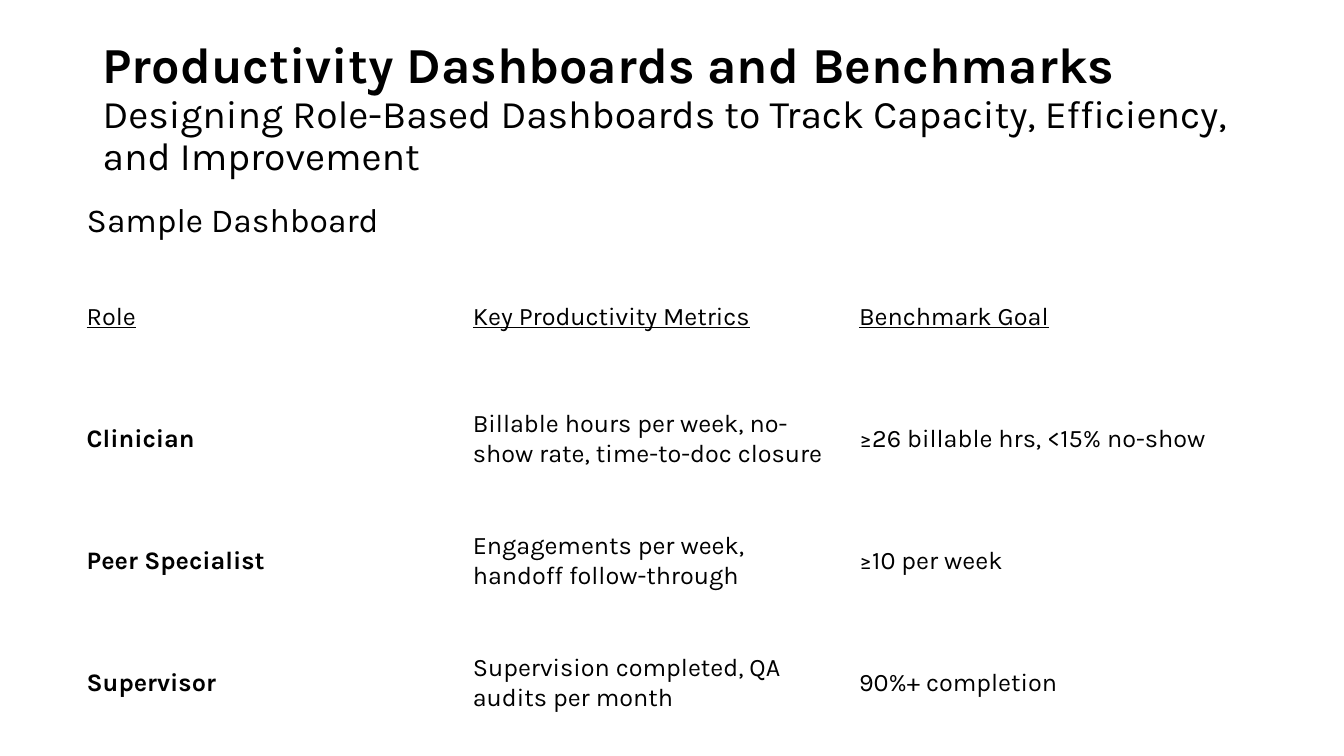
import pptx
import pptx.dml.color
import pptx.enum.text
import pptx.util

Inches = pptx.util.Inches
Pt = pptx.util.Pt

BLACK = pptx.dml.color.RGBColor(0x00, 0x00, 0x00)
FONT = "Karla"

HEADING = "Sample Dashboard"
COLUMNS = ("Role", "Key Productivity Metrics", "Benchmark Goal")
ROLES = (
    ("Clinician", "Billable hours per week, no-show rate, time-to-doc closure",
     "≥26 billable hrs, <15% no-show"),
    ("Peer Specialist", "Engagements per week, handoff follow-through",
     "≥10 per week"),
    ("Supervisor", "Supervision completed, QA audits per month",
     "90%+ completion"),
)


def write(para, text, size=18, bold=False, underline=False, spacing=None):
    if spacing:
        para.line_spacing = spacing
    span = para.add_run()
    span.text = text
    span.font.name = FONT
    span.font.size = Pt(size)
    span.font.bold = bold
    span.font.underline = underline
    span.font.color.rgb = BLACK


def add_title(page):
    box = page.shapes.add_textbox(Inches(0.92), Inches(0.4), Inches(11.5), Inches(1.45))
    frame = box.text_frame
    frame.word_wrap = True
    frame.vertical_anchor = pptx.enum.text.MSO_ANCHOR.MIDDLE
    frame.margin_bottom = Inches(0.13)
    write(frame.paragraphs[0], "Productivity Dashboards and Benchmarks",
          size=36, bold=True, spacing=0.9)
    write(frame.add_paragraph(),
          "Designing Role-Based Dashboards to Track Capacity, Efficiency, and Improvement",
          size=27.9, spacing=0.9)


def add_dashboard(page):
    row_count = len(ROLES) + 2
    table = page.shapes.add_table(row_count, len(COLUMNS), Inches(0.76), Inches(1.85),
                                  Inches(11.5), Inches(5.52)).table
    table.first_row = False
    table.horz_banding = False
    for column in table.columns:
        column.width = Inches(3.83)
    for index, row in enumerate(table.rows):
        row.height = Inches(1.21 if index else 0.69)
    for cell in table.iter_cells():
        cell.fill.background()
        cell.vertical_anchor = pptx.enum.text.MSO_ANCHOR.MIDDLE

    write(table.cell(0, 0).text_frame.paragraphs[0], HEADING, size=24)
    for row_index, values in enumerate((COLUMNS, *ROLES), start=1):
        is_header = row_index == 1
        for column_index, value in enumerate(values):
            write(table.cell(row_index, column_index).text_frame.paragraphs[0], value,
                  bold=column_index == 0 and not is_header, underline=is_header)


def main():
    deck = pptx.Presentation()
    deck.slide_width = Inches(13.33)
    deck.slide_height = Inches(7.5)
    page = deck.slides.add_slide(deck.slide_layouts[6])
    add_title(page)
    add_dashboard(page)
    deck.save("out.pptx")


if __name__ == "__main__":
    main()
